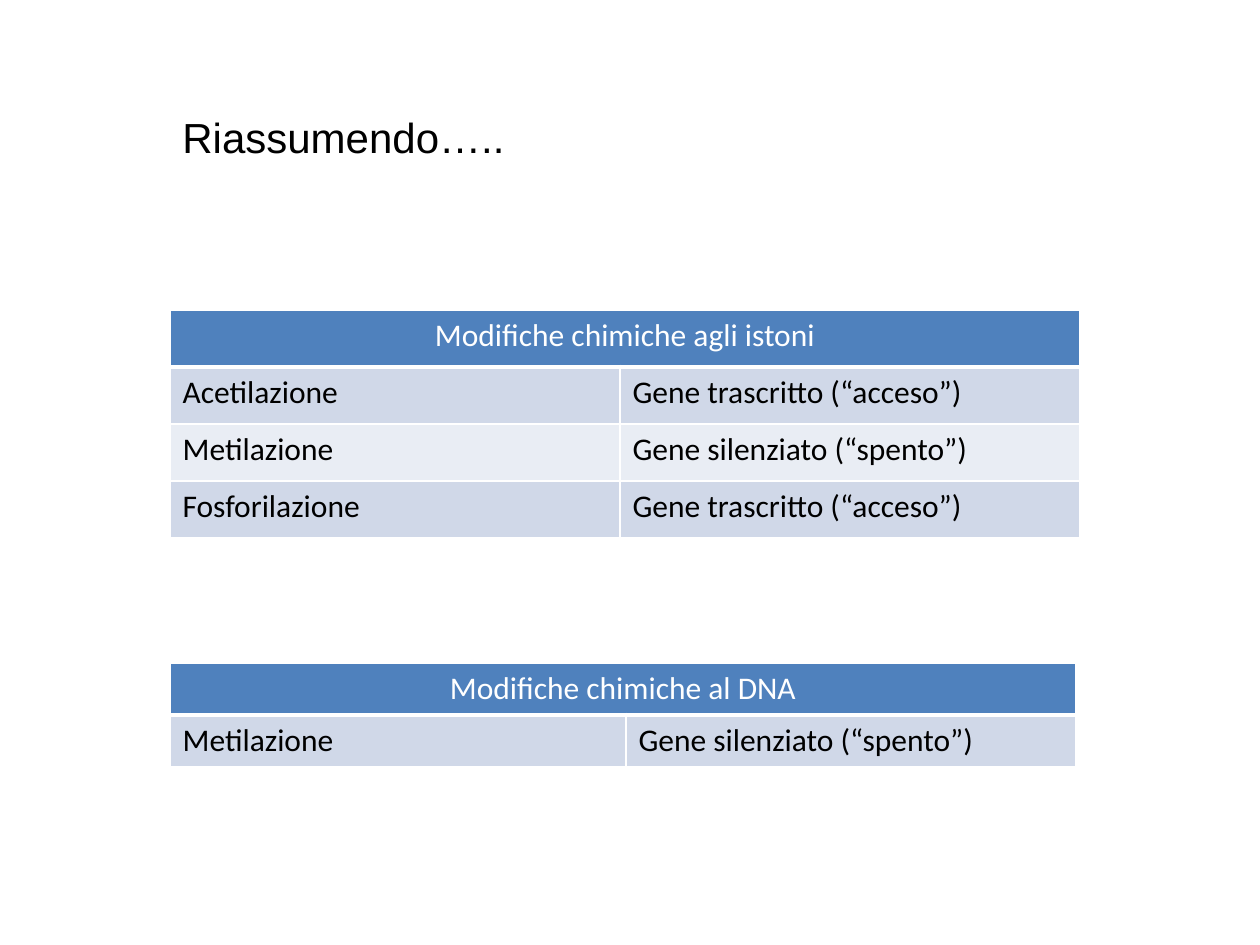
from dataclasses import dataclass

from lxml import etree
from pptx import Presentation
from pptx.dml.color import RGBColor
from pptx.enum import text
from pptx.oxml import ns
from pptx.util import Emu, Pt

SCALE = 914400 / 126
BLACK = RGBColor(0x00, 0x00, 0x00)
WHITE = RGBColor(0xFF, 0xFF, 0xFF)
BLUE = RGBColor(0x4F, 0x81, 0xBD)
BANDS = (RGBColor(0xD0, 0xD8, 0xE8), RGBColor(0xE9, 0xED, 0xF4))

ON = "Gene trascritto (“acceso”)"
OFF = "Gene silenziato (“spento”)"


@dataclass(frozen=True)
class Grid:
    top: int
    cols: tuple[int, int]
    row: int
    head: str
    body: tuple[tuple[str, str], ...]


LEFT = 170
GRIDS = (
    Grid(310, (450, 460), 57, "Modifiche chimiche agli istoni",
         (("Acetilazione", ON), ("Metilazione", OFF), ("Fosforilazione", ON))),
    Grid(663, (456, 450), 52, "Modifiche chimiche al DNA",
         (("Metilazione", OFF),)),
)


def px(n: int) -> Emu:
    return Emu(round(n * SCALE))


def style(par, **form) -> None:
    for key, val in form.items():
        if key == "color":
            par.font.color.rgb = val
        else:
            setattr(par.font, key, val)


def edge(cell, base: int = 1) -> None:
    """Rule all four sides in white; base is the bottom width in points."""
    props = cell._tc.get_or_add_tcPr()
    for i, (side, width) in enumerate(zip("LRTB", (1, 1, 1, base))):
        line = etree.Element(ns.qn(f"a:ln{side}"), w=str(Pt(width)))
        fill = etree.SubElement(line, ns.qn("a:solidFill"))
        etree.SubElement(fill, ns.qn("a:srgbClr"), val=str(WHITE))
        props.insert(i, line)


def fill_cell(cell, words: str, back: RGBColor, ink: RGBColor) -> None:
    cell.text = words
    cell.fill.solid()
    cell.fill.fore_color.rgb = back
    style(cell.text_frame.paragraphs[0], name="Calibri", size=Pt(18),
          bold=False, color=ink)


def draw_grid(slide, grid: Grid) -> None:
    count = len(grid.body) + 1
    table = slide.shapes.add_table(
        count, 2, px(LEFT), px(grid.top),
        px(sum(grid.cols)), px(grid.row * count)).table
    for col, width in zip(table.columns, grid.cols):
        col.width = px(width)
    for row in table.rows:
        row.height = px(grid.row)

    head = table.cell(0, 0)
    head.merge(table.cell(0, 1))
    fill_cell(head, grid.head, BLUE, WHITE)
    head.text_frame.paragraphs[0].alignment = text.PP_ALIGN.CENTER
    for cell in (head, table.cell(0, 1)):
        edge(cell, 3)

    for r, pair in enumerate(grid.body):
        for c, words in enumerate(pair):
            cell = table.cell(r + 1, c)
            fill_cell(cell, words, BANDS[r % 2], BLACK)
            edge(cell)


def draw_title(slide, words: str) -> None:
    box = slide.shapes.add_textbox(px(LEFT), px(112), px(406), px(112))
    frame = box.text_frame
    form = {"word_wrap": True, "margin_top": 0,
            "vertical_anchor": text.MSO_ANCHOR.TOP}
    for key, val in form.items():
        setattr(frame, key, val)
    frame.text = words
    style(frame.paragraphs[0], name="Arial", size=Pt(24), color=BLACK)


def main() -> None:
    deck = Presentation()
    deck.slide_width, deck.slide_height = px(1260), px(945)
    slide = deck.slides.add_slide(deck.slide_layouts[6])
    draw_title(slide, "Riassumendo…..")
    for grid in GRIDS:
        draw_grid(slide, grid)
    deck.save("out.pptx")


if __name__ == "__main__":
    main()
